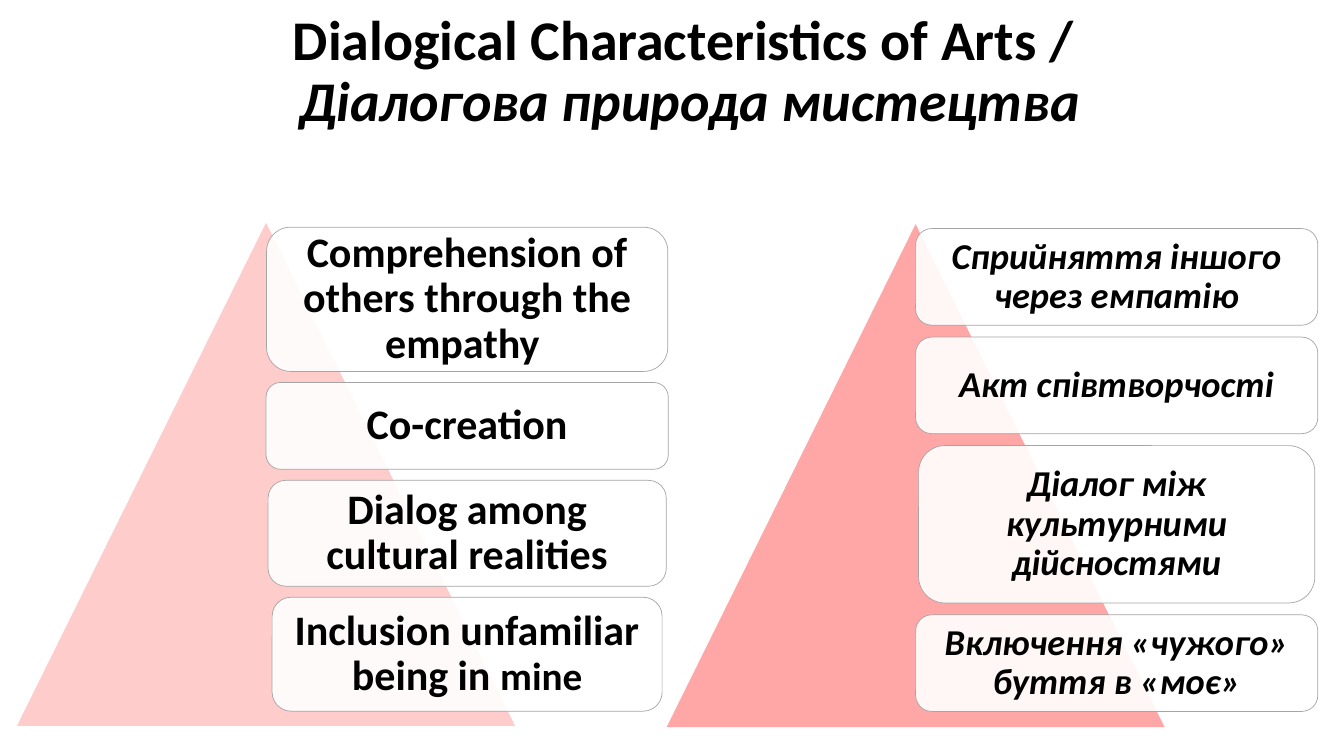
from lxml.etree import SubElement
from pptx import Presentation
from pptx.dml.color import RGBColor
from pptx.enum.shapes import MSO_SHAPE
from pptx.enum.text import MSO_ANCHOR, MSO_AUTO_SIZE, PP_ALIGN
from pptx.oxml.ns import qn
from pptx.util import Pt

BLACK = RGBColor(0x00, 0x00, 0x00)
WHITE = RGBColor(0xFF, 0xFF, 0xFF)
GREY = RGBColor(0xA5, 0xA5, 0xA5)
PALE_PINK = RGBColor(0xFF, 0xCC, 0xCC)
PINK = RGBColor(0xFF, 0xA7, 0xA7)


def add_run(paragraph, text, size, italic=False):
    run = paragraph.add_run()
    run.text = text
    run.font.name = "Calibri"
    run.font.size = Pt(size)
    run.font.bold = True
    run.font.italic = italic
    run.font.color.rgb = BLACK


def prepare_text(shape, inset):
    frame = shape.text_frame
    frame.word_wrap = True
    frame.auto_size = MSO_AUTO_SIZE.NONE
    frame.vertical_anchor = MSO_ANCHOR.MIDDLE
    frame.margin_left = frame.margin_right = Pt(inset)
    frame.margin_top = frame.margin_bottom = Pt(inset)
    paragraph = frame.paragraphs[0]
    paragraph.alignment = PP_ALIGN.CENTER
    paragraph.line_spacing = 0.9
    return paragraph


def add_filled_shape(group, kind, box, color):
    shape = group.shapes.add_shape(kind, *map(Pt, box))
    shape.shadow.inherit = False
    shape.fill.solid()
    shape.fill.fore_color.rgb = color
    return shape


def add_title(slide, box):
    title = slide.shapes.title
    title.left, title.top, title.width, title.height = map(Pt, box)
    paragraph = prepare_text(title, 4)
    add_run(paragraph, "Dialogical Characteristics of Arts / ", 40)
    paragraph.add_line_break()
    add_run(paragraph, "Діалогова природа мистецтва", 40, italic=True)


def add_card(group, box, runs, inset, italic):
    card = add_filled_shape(group, MSO_SHAPE.ROUNDED_RECTANGLE, box, WHITE)
    color = card.fill._xPr.find(qn("a:solidFill"))[0]
    SubElement(color, qn("a:alpha"), val="90000")
    card.line.color.rgb = GREY
    card.line.width = Pt(0.5)
    paragraph = prepare_text(card, inset)
    for text, size in runs:
        add_run(paragraph, text, size, italic)


def add_pyramid(slide, box, color, cards, gap, inset, italic=False):
    left, top, width, height = box
    group = slide.shapes.add_group_shape()
    triangle = add_filled_shape(group, MSO_SHAPE.ISOSCELES_TRIANGLE, box, color)
    triangle.line.fill.background()
    center = left + 321.5
    card_top = top + 3.2
    for card_width, card_height, runs in cards:
        card_box = (center - card_width / 2, card_top, card_width, card_height)
        add_card(group, card_box, runs, inset, italic)
        card_top += card_height + gap


def main():
    presentation = Presentation()
    presentation.slide_width = Pt(960)
    presentation.slide_height = Pt(540)
    slide = presentation.slides.add_slide(presentation.slide_layouts[5])
    add_title(slide, (78.5, 0, 828, 104.4))

    english_cards = [
        (286.6, 103, [("Comprehension of others through the empathy ", 30)]),
        (287.3, 62, [("Co-creation", 30)]),
        (284.4, 75.6, [("Dialog among cultural realities", 30)]),
        (278.6, 81.4, [("Inclusion unfamiliar being in ", 30), ("mine", 28)]),
    ]
    ukrainian_cards = [
        (287.3, 69, [("Сприйняття іншого через емпатію", 26)]),
        (287.3, 69, [("Акт співтворчості", 26)]),
        (283, 112.4, [("Діалог між культурними дійсностями", 26)]),
        (287.3, 69, [("Включення «чужого» буття в «моє»", 26)]),
    ]
    add_pyramid(slide, (12.2, 159.1, 355.7, 359.3), PALE_PINK, english_cards,
                gap=7.9, inset=8.4)
    add_pyramid(slide, (476.2, 160.1, 355.7, 359.3), PINK, ukrainian_cards,
                gap=8.5, inset=7.8, italic=True)
    presentation.save("out.pptx")


if __name__ == "__main__":
    main()
